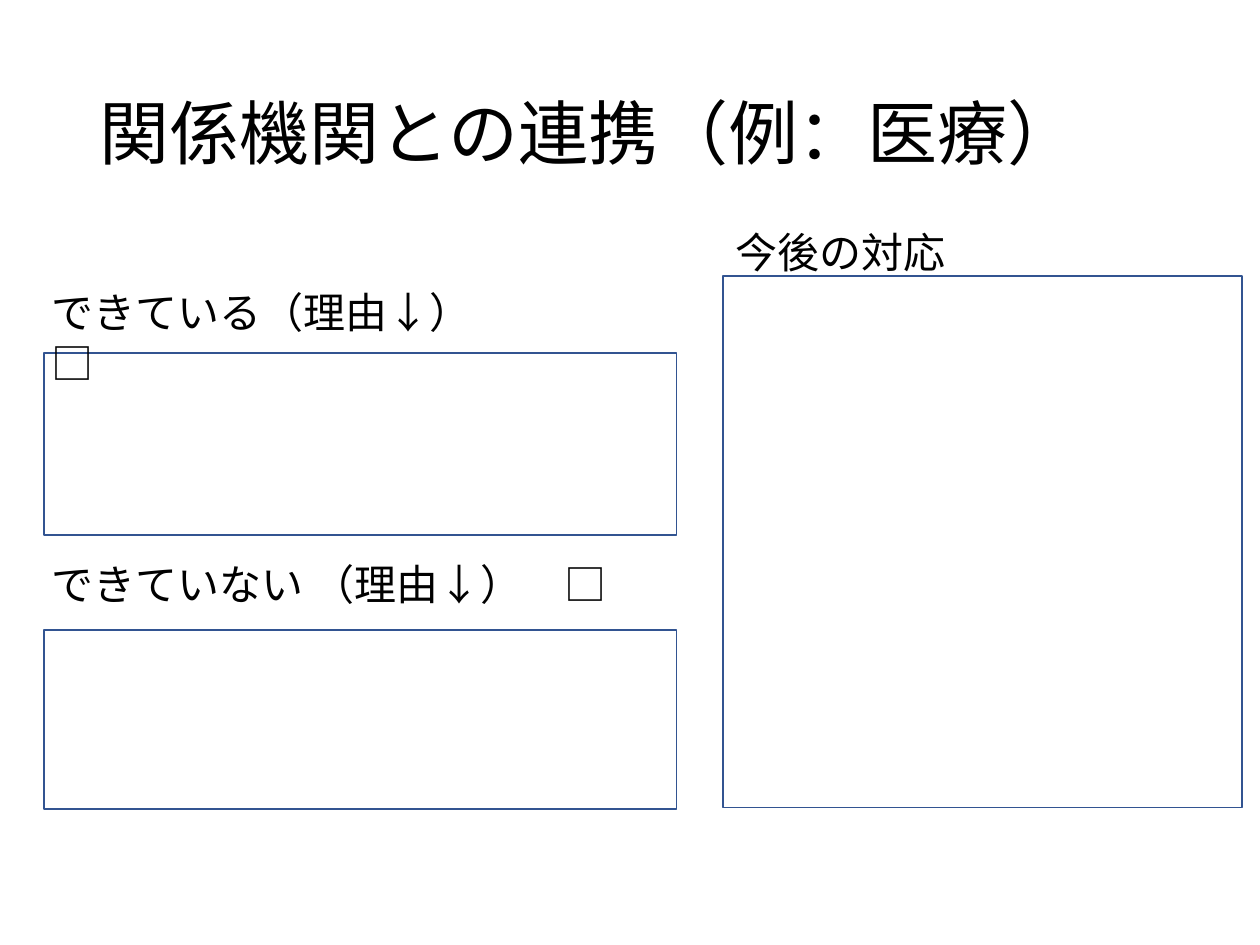
from dataclasses import dataclass

import pptx
import pptx.dml.color
import pptx.enum.shapes
import pptx.enum.text
import pptx.util
from pptx.util import Cm


@dataclass(frozen=True)
class Theme:
    font: str = "Calibri"
    title_size: int = 40
    label_size: int = 24
    text: str = "000000"
    frame: str = "325491"
    frame_width: int = 1


THEME = Theme()
LABEL_HEIGHT = 1.27


def rgb(value):
    return pptx.dml.color.RGBColor.from_string(value)


def style(p, size):
    p.font.name = THEME.font
    p.font.size = pptx.util.Pt(size)
    p.font.color.rgb = rgb(THEME.text)
    p.alignment = pptx.enum.text.PP_ALIGN.LEFT


def add_title(slide, text, left, top, width, height):
    sp = slide.shapes.title
    sp.left, sp.top, sp.width, sp.height = map(Cm, (left, top, width, height))
    tf = sp.text_frame
    tf.text = text
    tf.vertical_anchor = pptx.enum.text.MSO_ANCHOR.MIDDLE
    p = tf.paragraphs[0]
    p.line_spacing = 0.9
    style(p, THEME.title_size)


def add_answer_field(slide, text, left, top, width, height,
                     label_rise, label_width, label_shift=0):
    """Place an empty answer frame, with its label starting label_rise above it."""
    frame = slide.shapes.add_shape(pptx.enum.shapes.MSO_SHAPE.RECTANGLE,
                                   Cm(left), Cm(top), Cm(width), Cm(height))
    frame.shadow.inherit = False
    frame.fill.background()
    frame.line.color.rgb = rgb(THEME.frame)
    frame.line.width = pptx.util.Pt(THEME.frame_width)

    label = slide.shapes.add_textbox(Cm(left + label_shift), Cm(top - label_rise),
                                     Cm(label_width), Cm(LABEL_HEIGHT))
    tf = label.text_frame
    tf.word_wrap = True
    tf.text = text
    style(tf.paragraphs[0], THEME.label_size)


def main():
    prs = pptx.Presentation()
    prs.slide_width, prs.slide_height = Cm(25.4), Cm(19.05)
    slide = prs.slides.add_slide(prs.slide_layouts.get_by_name("Title Only"))

    add_title(slide, "関係機関との連携（例：医療）", 1.75, 0.91, 21.9, 3.68)
    # A vertical tab is a line break: the check box stands below its label.
    add_answer_field(slide, "できている（理由↓）\v□", 0.89, 7.11, 12.75, 3.68,
                     label_rise=1.45, label_width=11.48, label_shift=-0.1)
    add_answer_field(slide, "できていない （理由↓）　□", 0.89, 12.7, 12.75, 3.61,
                     label_rise=1.57, label_width=12.47, label_shift=-0.1)
    add_answer_field(slide, "今後の対応", 14.58, 5.56, 10.46, 10.72,
                     label_rise=1.12, label_width=6.3)

    prs.save("out.pptx")


if __name__ == "__main__":
    main()
